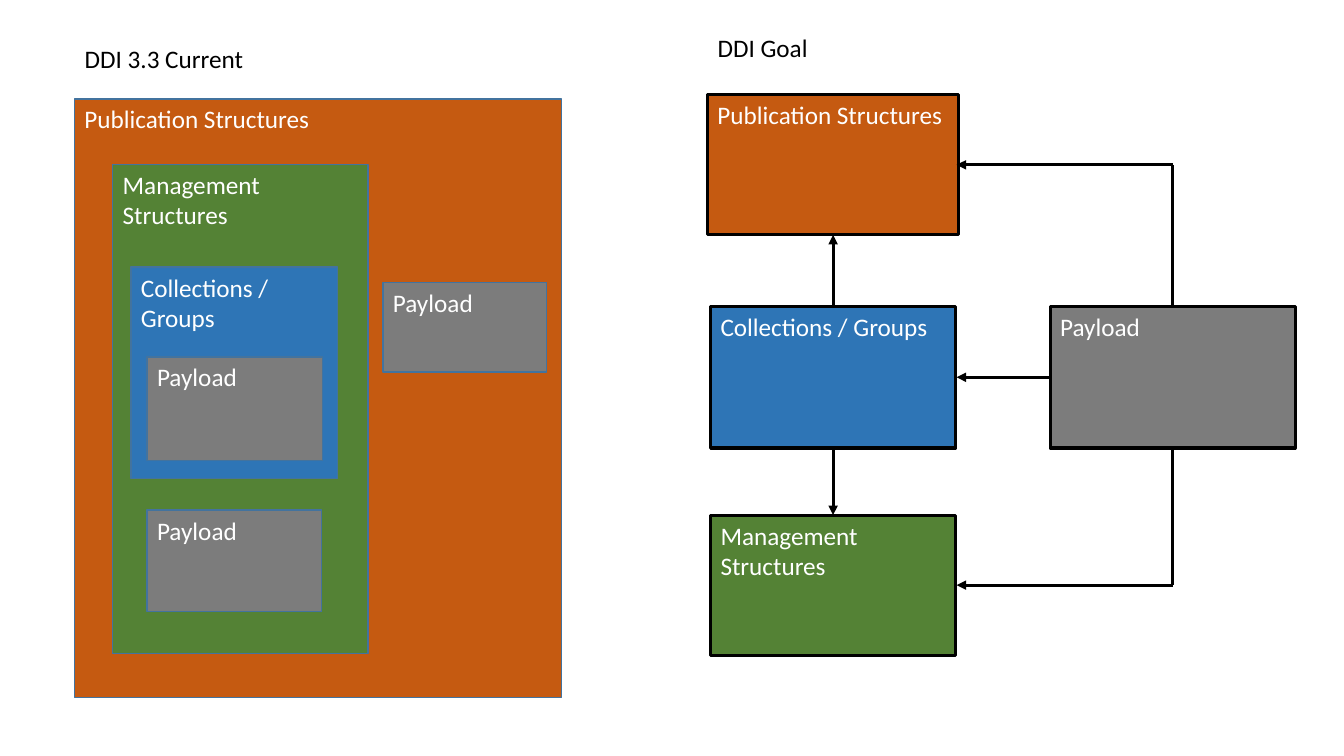
from dataclasses import dataclass

from lxml import etree
from pptx import Presentation
from pptx.dml.color import RGBColor
from pptx.enum.shapes import MSO_CONNECTOR, MSO_SHAPE
from pptx.enum.text import MSO_ANCHOR, MSO_AUTO_SIZE, PP_ALIGN
from pptx.oxml.ns import qn
from pptx.util import Pt

RECT = MSO_SHAPE.RECTANGLE
LINE = MSO_CONNECTOR.STRAIGHT
TOP = MSO_ANCHOR.TOP
FIXED = MSO_AUTO_SIZE.NONE
LEFT = PP_ALIGN.LEFT


@dataclass(frozen=True)
class Theme:
    font: str = "Calibri"
    size: float = 18
    thin: float = 1
    thick: float = 2.25
    ink: str = "000000"
    paper: str = "FFFFFF"
    edge: str = "43739E"
    rust: str = "C55A11"
    green: str = "548235"
    blue: str = "2E75B6"
    gray: str = "7C7C7C"


@dataclass(frozen=True)
class Box:
    text: str
    left: float
    top: float
    width: float
    height: float

    @property
    def mid_x(self) -> float:
        return self.left + self.width / 2

    @property
    def mid_y(self) -> float:
        return self.top + self.height / 2

    @property
    def right(self) -> float:
        return self.left + self.width

    @property
    def base(self) -> float:
        return self.top + self.height


@dataclass(frozen=True)
class Link:
    start: tuple[float, float]
    end: tuple[float, float]
    arrow: bool = True


THEME = Theme()
PUB, MAN = "Publication Structures", "Management Structures"
COLL, PAY = "Collections / Groups", "Payload"
FILLS = {PUB: THEME.rust, MAN: THEME.green, COLL: THEME.blue, PAY: THEME.gray}

HEADS = (
    Box("DDI 3.3 Current", 53.3, 27.4, 168.5, 28.8),
    Box("DDI Goal", 505.4, 19.4, 168.5, 28.8),
)
NESTED = (
    Box(PUB, 53.3, 70.6, 347.8, 427.7),
    Box(MAN, 80.6, 117.4, 182.2, 349.2),
    Box(COLL, 93.6, 190.8, 147.6, 151.2),
    Box(PAY, 105.1, 364.3, 124.6, 72.7),
    Box(PAY, 105.1, 254.9, 125.3, 74.2),
    Box(PAY, 273.6, 201.6, 116.6, 64.1),
)
PUB_BOX = Box(PUB, 505.4, 67.7, 179.3, 100.1)
MAN_BOX = Box(MAN, 507.6, 367.9, 175, 100.1)
COLL_BOX = Box(COLL, 507.6, 218.9, 175, 101.2)
PAY_BOX = Box(PAY, 750.2, 218.9, 175, 101.2)
GOAL = (PUB_BOX, MAN_BOX, COLL_BOX, PAY_BOX)

TIP = COLL_BOX.right + 0.7
HIGH = (PAY_BOX.mid_x, PUB_BOX.mid_y)
LOW = (PAY_BOX.mid_x, MAN_BOX.mid_y)
LINKS = (
    Link((PAY_BOX.left, PAY_BOX.mid_y), (TIP, COLL_BOX.mid_y)),
    Link(HIGH, (TIP, HIGH[1])),
    Link(HIGH, (PAY_BOX.mid_x, PAY_BOX.top), False),
    Link((PAY_BOX.mid_x, PAY_BOX.base), LOW, False),
    Link(LOW, (TIP, LOW[1])),
    Link((COLL_BOX.mid_x, COLL_BOX.top), (COLL_BOX.mid_x, PUB_BOX.base)),
    Link((COLL_BOX.mid_x, COLL_BOX.base), (COLL_BOX.mid_x, MAN_BOX.top)),
)


def apply(item, form: dict) -> None:
    for name, value in form.items():
        setattr(item, name, value)


def write(shape, text: str, color: str) -> None:
    frame = shape.text_frame
    frame.text = text
    apply(frame, {
        "word_wrap": True, "auto_size": FIXED, "vertical_anchor": TOP,
        "margin_left": Pt(7.2), "margin_right": Pt(7.2),
        "margin_top": Pt(3.6), "margin_bottom": Pt(3.6),
    })
    line = frame.paragraphs[0]
    apply(line, {"alignment": LEFT, "space_before": Pt(0)})
    apply(line.font, {"name": THEME.font, "size": Pt(THEME.size), "bold": False})
    line.font.color.rgb = RGBColor.from_string(color)


def stroke(shape, color: str, width: float) -> None:
    shape.line.color.rgb = RGBColor.from_string(color)
    shape.line.width = Pt(width)


def draw_head(shape, head: Box) -> None:
    apply(shape, {key: Pt(getattr(head, key))
                  for key in ("left", "top", "width", "height")})
    write(shape, head.text, THEME.ink)


def draw_box(slide, box: Box, color: str, width: float) -> None:
    shape = slide.shapes.add_shape(
        RECT, Pt(box.left), Pt(box.top), Pt(box.width), Pt(box.height))
    shape.shadow.inherit = False
    shape.fill.solid()
    shape.fill.fore_color.rgb = RGBColor.from_string(FILLS[box.text])
    stroke(shape, color, width)
    write(shape, box.text, THEME.paper)


def draw_link(slide, link: Link) -> None:
    shape = slide.shapes.add_connector(
        LINE, *(Pt(value) for value in link.start + link.end))
    stroke(shape, THEME.ink, THEME.thick)
    if link.arrow:
        etree.SubElement(shape.line._get_or_add_ln(), qn("a:tailEnd"), type="triangle")
    etree.SubElement(shape._element.spPr, qn("a:effectLst"))


def main() -> None:
    deck = Presentation()
    apply(deck, {"slide_width": Pt(960), "slide_height": Pt(540)})
    slide = deck.slides.add_slide(deck.slide_layouts.get_by_name("Comparison"))
    for holder in list(slide.placeholders):
        order = holder.placeholder_format.idx
        if order < len(HEADS):
            draw_head(holder, HEADS[order])
        else:
            holder.element.getparent().remove(holder.element)
    for box in NESTED:
        draw_box(slide, box, THEME.edge, THEME.thin)
    for box in GOAL:
        draw_box(slide, box, THEME.ink, THEME.thick)
    for link in LINKS:
        draw_link(slide, link)
    deck.save("out.pptx")


if __name__ == "__main__":
    main()
